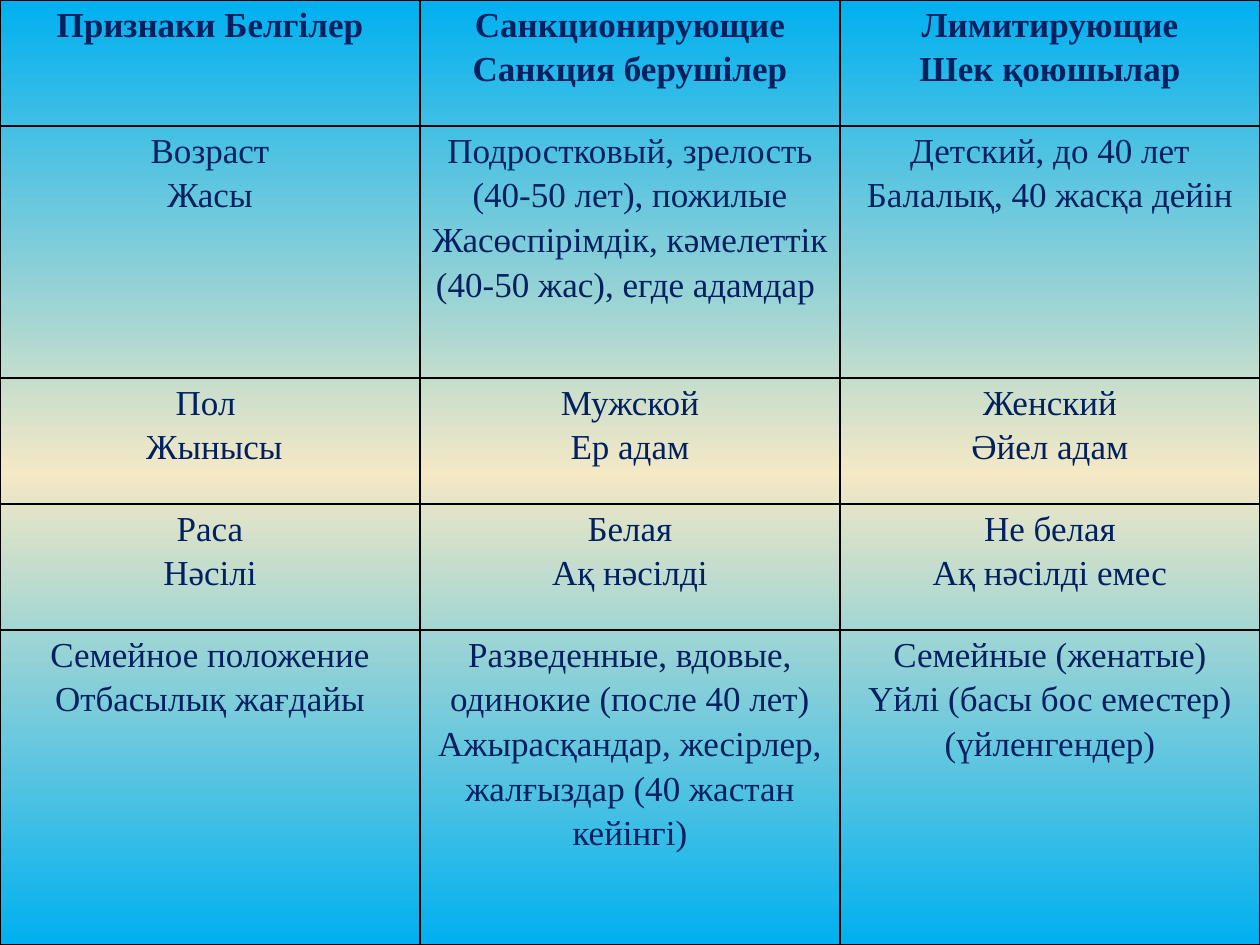
from copy import deepcopy

from lxml.etree import SubElement
from pptx import Presentation
from pptx.dml.color import RGBColor
from pptx.enum.text import PP_ALIGN as Align
from pptx.oxml.ns import qn
from pptx.util import Emu, Pt

SCALE = 914400 / 126
SLIDE_WIDTH, SLIDE_HEIGHT = 1260, 945
NAVY = RGBColor(0x00, 0x20, 0x60)
SKY = RGBColor(0x00, 0xB0, 0xF0)
CREAM = RGBColor(0xF4, 0xE8, 0xC5)
BLACK = RGBColor(0x00, 0x00, 0x00)

ROW_HEIGHTS = [126, 252, 126, 126, 315]
COLUMN_WIDTHS = [420, 420, 420]
ROWS = [
    ["Признаки Белгілер",
     "Санкционирующие\nСанкция берушілер",
     "Лимитирующие\nШек қоюшылар"],
    ["Возраст\nЖасы",
     "Подростковый, зрелость (40-50 лет), пожилые\n"
     "Жасөспірімдік, кәмелеттік (40-50 жас), егде адамдар ",
     "Детский, до 40 лет\nБалалық, 40 жасқа дейін"],
    ["Пол \n Жынысы",
     "Мужской\nЕр адам",
     "Женский\nӘйел адам"],
    ["Раса\nНәсілі",
     "Белая\nАқ нәсілді",
     "Не белая\nАқ нәсілді емес"],
    ["Семейное положение\nОтбасылық жағдайы",
     "Разведенные, вдовые, одинокие (после 40 лет)\n"
     "Ажырасқандар, жесірлер, жалғыздар (40 жастан кейінгі)",
     "Семейные (женатые)\nҮйлі (басы бос еместер) (үйленгендер)"],
]


def px(length):
    return Emu(round(length * SCALE))


class SlideBuilder:
    font_name = "Times New Roman"
    font_size = Pt(20)
    line_spacing = 1.15
    cell_inset = 6
    border_width = Pt(1)

    def __init__(self, slide):
        self.slide = slide

    def background(self, edge, middle):
        fill = self.slide.background.fill
        fill.gradient()
        fill.gradient_angle = 270
        for stop, position in zip(fill.gradient_stops, (0, 1)):
            stop.color.rgb = edge
            stop.position = position
        stop_list = next(self.slide.element.iter(qn("a:gsLst")))
        stop_list.insert(1, deepcopy(stop_list[0]))
        middle_stop = fill.gradient_stops[1]
        middle_stop.color.rgb = middle
        middle_stop.position = 0.5

    def table(self, left, top, widths, heights, rows):
        frame = self.slide.shapes.add_table(
            len(heights), len(widths), px(left), px(top),
            px(sum(widths)), px(sum(heights)))
        table = frame.table
        table.first_row = table.horz_banding = False
        for column, width in zip(table.columns, widths):
            column.width = px(width)
        for row_index, (row, height) in enumerate(zip(table.rows, heights)):
            row.height = px(height)
            for cell, text in zip(row.cells, rows[row_index]):
                self.cell(cell, text, bold=row_index == 0)

    def cell(self, cell, text, bold):
        cell.margin_left = cell.margin_right = px(self.cell_inset)
        cell.margin_top = cell.margin_bottom = 0
        self.borders(cell)
        cell.fill.background()
        cell.text = text
        for paragraph in cell.text_frame.paragraphs:
            paragraph.alignment = Align.CENTER
            paragraph.line_spacing = self.line_spacing
            font = paragraph.font
            font.name = self.font_name
            font.size = self.font_size
            font.bold = bold
            font.color.rgb = NAVY

    def borders(self, cell):
        properties = cell._tc.get_or_add_tcPr()
        for side in ("L", "R", "T", "B"):
            line = SubElement(properties, qn(f"a:ln{side}"), w=str(self.border_width))
            solid = SubElement(line, qn("a:solidFill"))
            SubElement(solid, qn("a:srgbClr"), val=str(BLACK))


def main():
    presentation = Presentation()
    presentation.slide_width = px(SLIDE_WIDTH)
    presentation.slide_height = px(SLIDE_HEIGHT)
    blank_layout = presentation.slide_layouts[6]
    builder = SlideBuilder(presentation.slides.add_slide(blank_layout))
    builder.background(SKY, CREAM)
    builder.table(0, 0, COLUMN_WIDTHS, ROW_HEIGHTS, ROWS)
    presentation.save("out.pptx")


if __name__ == "__main__":
    main()
